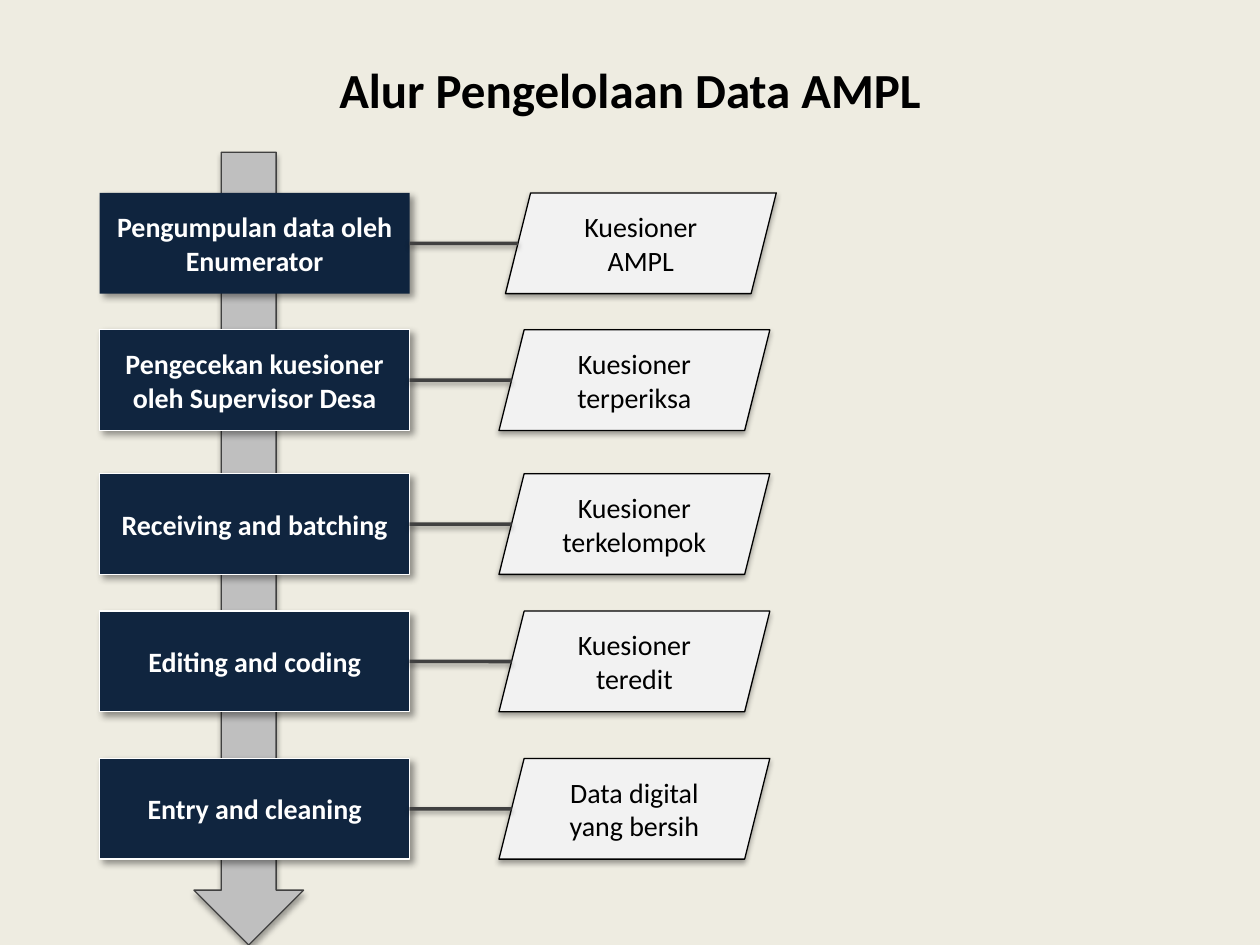
from lxml.etree import SubElement
from pptx import Presentation
from pptx.dml.color import RGBColor
from pptx.enum.shapes import MSO_CONNECTOR, MSO_SHAPE
from pptx.enum.text import MSO_ANCHOR, PP_ALIGN
from pptx.oxml.ns import qn
from pptx.util import Cm, Pt

CREAM = RGBColor(0xEE, 0xEC, 0xE1)
BLACK = RGBColor(0, 0, 0)
WHITE = RGBColor(0xFF, 0xFF, 0xFF)
DARK_NAVY = RGBColor(0x0F, 0x24, 0x3E)
NAVY = RGBColor(0x10, 0x25, 0x3F)
PALE_GRAY = RGBColor(0xF2, 0xF2, 0xF2)
MID_GRAY = RGBColor(0xBF, 0xBF, 0xBF)
DARK_GRAY = RGBColor(0x40, 0x40, 0x40)

# Shadows: opacity in percent, blur and distance in points, direction in degrees
SOFT_SHADOW = (35, 3.1, 1.8, 90)
BOX_SHADOW = (40, 4, 3, 45)
LINE_SHADOW = (38, 3.1, 1.6, 90)

STEP_LEFT, STEP_WIDTH = 2.01, 6.25
RESULT_WIDTH = 5.46
ROW_HEIGHT = 2.03
RESULT_SLANT = ROW_HEIGHT / 4

# Top, step, result, left of result, step fill, step outline
ROWS = [
    (3.89, "Pengumpulan data oleh Enumerator", "Kuesioner AMPL", 10.19, DARK_NAVY, None),
    (6.65, "Pengecekan kuesioner oleh Supervisor Desa", "Kuesioner terperiksa", 10.06, NAVY, WHITE),
    (9.55, "Receiving and batching", "Kuesioner terkelompok", 10.06, NAVY, WHITE),
    (12.32, "Editing and coding", "Kuesioner teredit", 10.06, NAVY, WHITE),
    (15.29, "Entry and cleaning", "Data digital yang bersih", 10.06, NAVY, WHITE),
]


class FlowSlide:
    font = "Calibri"

    def __init__(self, presentation):
        self.slide = presentation.slides.add_slide(presentation.slide_layouts[6])
        self.slide.background.fill.solid()
        self.slide.background.fill.fore_color.rgb = CREAM

    def add_text(self, shape, text, size, color, bold):
        frame = shape.text_frame
        frame.word_wrap = True
        frame.vertical_anchor = MSO_ANCHOR.MIDDLE
        paragraph = frame.paragraphs[0]
        paragraph.alignment = PP_ALIGN.CENTER
        run = paragraph.add_run()
        run.text = text
        run.font.name = self.font
        run.font.size = Pt(size)
        run.font.bold = bold
        run.font.color.rgb = color

    def cast_shadow(self, shape, opacity, blur, distance, direction):
        """Add a black outer shadow; call it once fill and line are set."""
        effects = SubElement(shape._element.spPr, qn("a:effectLst"))
        shadow = SubElement(
            effects, qn("a:outerShdw"), blurRad=str(Pt(blur)), dist=str(Pt(distance)),
            dir=str(direction * 60000), algn="ctr", rotWithShape="0")
        color = SubElement(shadow, qn("a:srgbClr"), val=str(BLACK))
        SubElement(color, qn("a:alpha"), val=str(opacity * 1000))

    def title(self, text, left, top, width, height):
        box = self.slide.shapes.add_textbox(Cm(left), Cm(top), Cm(width), Cm(height))
        self.add_text(box, text, 28, BLACK, True)

    def shape(self, kind, left, top, width, height, fill, outline, shadow):
        shape = self.slide.shapes.add_shape(kind, Cm(left), Cm(top), Cm(width), Cm(height))
        shape.fill.solid()
        shape.fill.fore_color.rgb = fill
        if outline is None:
            shape.line.fill.background()
        else:
            shape.line.color.rgb = outline
            shape.line.width = Pt(0.75)
        self.cast_shadow(shape, *shadow)
        return shape

    def step(self, text, top, fill, outline):
        box = self.shape(MSO_SHAPE.RECTANGLE, STEP_LEFT, top, STEP_WIDTH, ROW_HEIGHT,
                         fill, outline, BOX_SHADOW)
        self.add_text(box, text, 16, WHITE, True)
        return box

    def result(self, text, left, top):
        box = self.shape(MSO_SHAPE.PARALLELOGRAM, left, top, RESULT_WIDTH, ROW_HEIGHT,
                         PALE_GRAY, BLACK, SOFT_SHADOW)
        self.add_text(box, text, 16, BLACK, False)

    def link(self, step, end_left, middle):
        """Join the right side of a step to the slanted side of its result."""
        connector = self.slide.shapes.add_connector(
            MSO_CONNECTOR.STRAIGHT, Cm(STEP_LEFT + STEP_WIDTH), Cm(middle),
            Cm(end_left), Cm(middle))
        connector.begin_connect(step, 3)
        connector.line.color.rgb = DARK_GRAY
        connector.line.width = Pt(2)
        self.cast_shadow(connector, *LINE_SHADOW)


def main():
    presentation = Presentation()
    presentation.slide_width = Cm(25.4)
    presentation.slide_height = Cm(19.05)
    flow = FlowSlide(presentation)
    flow.shape(MSO_SHAPE.DOWN_ARROW, 3.91, 3.07, 2.21, 15.98,
               MID_GRAY, DARK_GRAY, SOFT_SHADOW)
    flow.title("Alur Pengelolaan Data AMPL", 1.27, 0.76, 22.86, 2.08)
    for top, step_text, result_text, result_left, fill, outline in ROWS:
        step = flow.step(step_text, top, fill, outline)
        flow.result(result_text, result_left, top)
        flow.link(step, result_left + RESULT_SLANT / 2, top + ROW_HEIGHT / 2)
    presentation.save("out.pptx")


if __name__ == "__main__":
    main()
